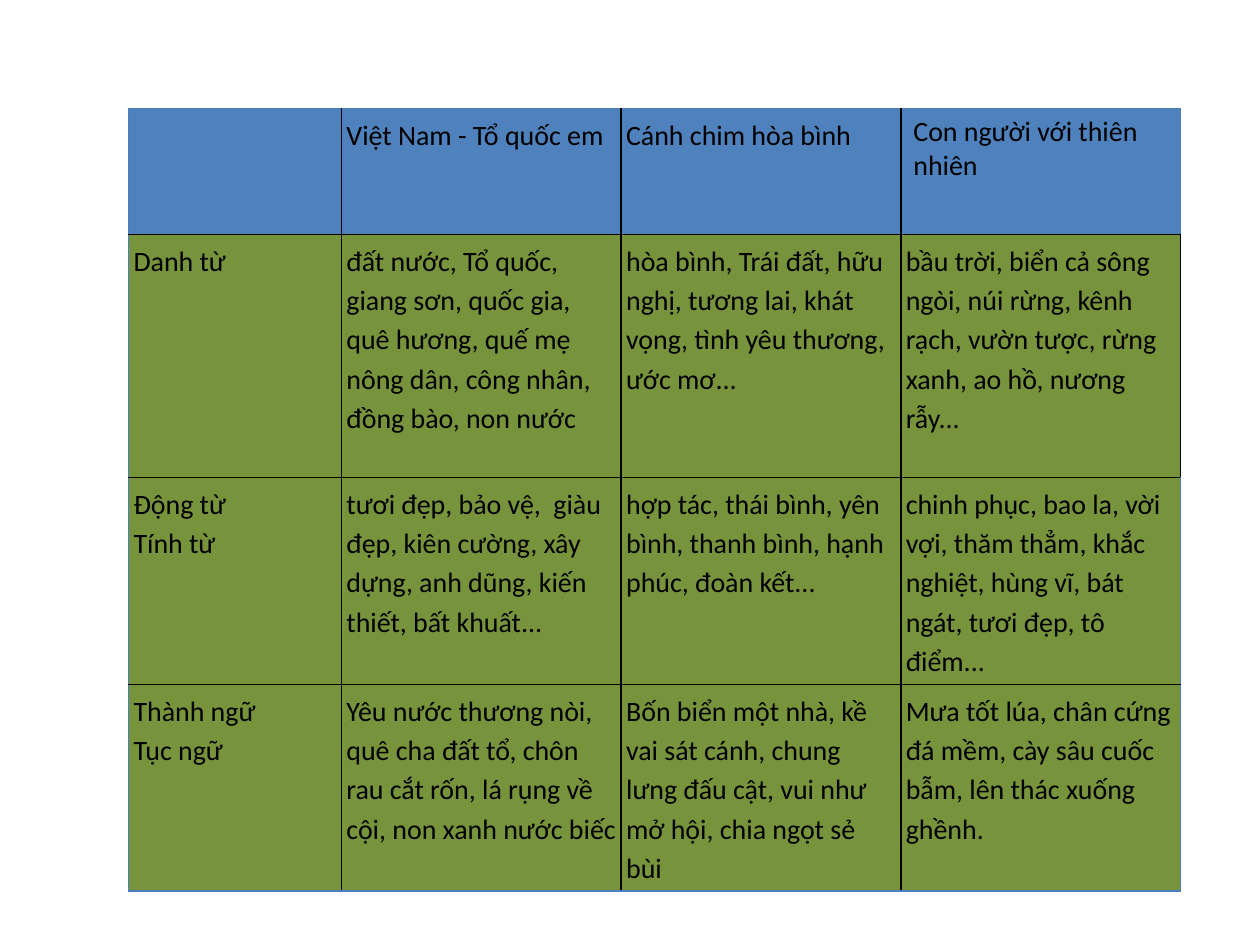
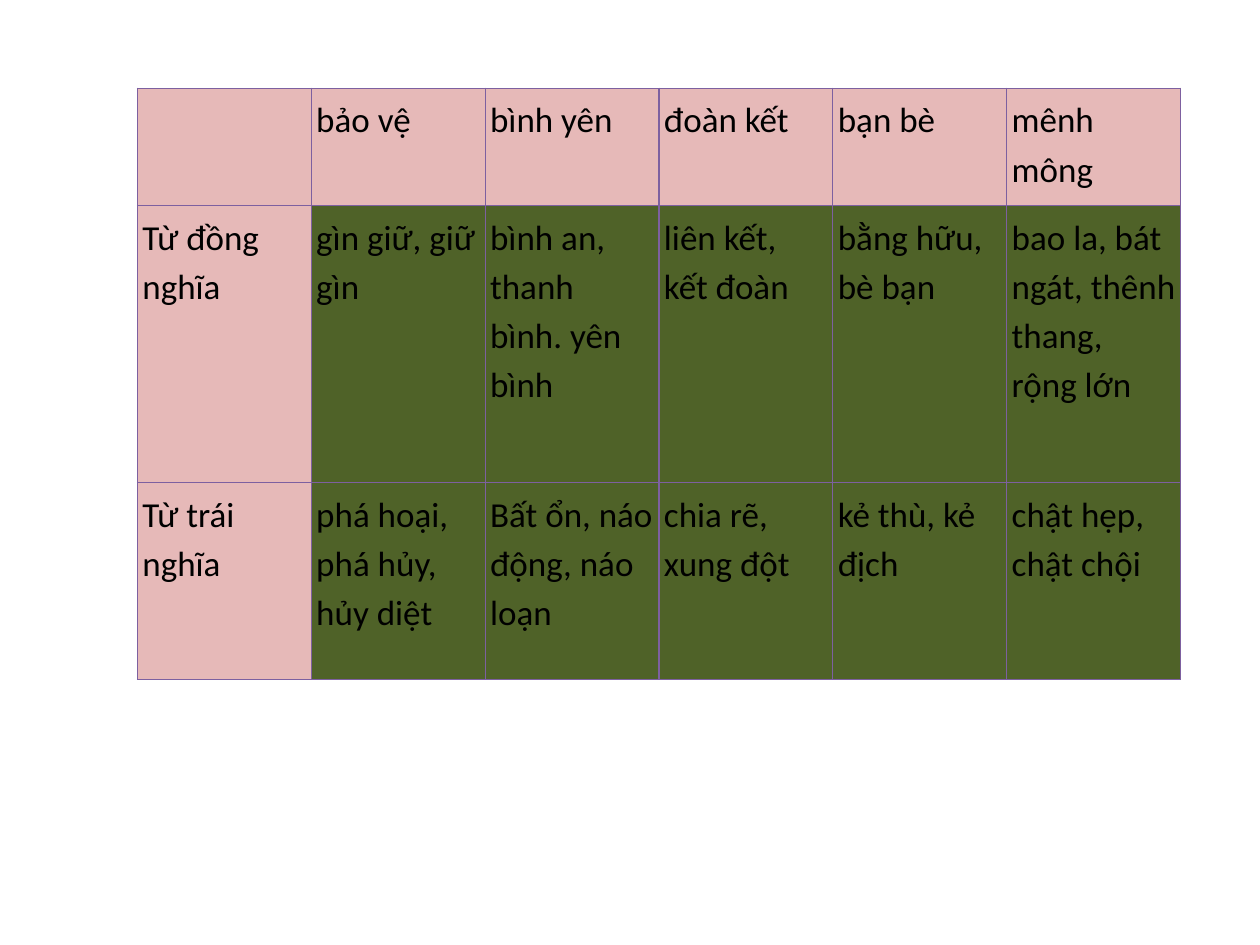
from dataclasses import dataclass, field

import lxml.etree
import pptx
import pptx.dml.color
import pptx.oxml.ns
import pptx.util

Inches = pptx.util.Inches
Pt = pptx.util.Pt

FONT = "Calibri"
BLACK = "000000"
BLUE = "4F81BD"
GREEN = "77933C"
PINK = "E6B9B8"
DARK_GREEN = "4F6228"


@dataclass(frozen=True)
class Line:
    color: str
    width: float


@dataclass(frozen=True)
class WordTable:
    left: float
    top: float
    columns: list[float]
    heights: list[float]
    rows: list[list[str]]
    size: int
    header_fill: str
    label_fill: str
    body_fill: str
    inner: Line
    outer: Line
    # Exceptions, keyed by (row, column)
    right_lines: dict = field(default_factory=dict)
    text_formats: dict = field(default_factory=dict)


PURPLE_LINE = Line("7D60A0", 0.75)

THEMES = WordTable(
    left=1.02, top=0.86, columns=[1.69] + [2.22] * 3, heights=[1, 1.93, 1.62, 1.62],
    size=16, header_fill=BLUE, label_fill=GREEN, body_fill=GREEN,
    inner=Line(BLACK, 1), outer=Line("4B7EBC", 0.75),
    right_lines={(1, 3): Line(BLACK, 1)},
    text_formats={
        (0, 3): {"margins": (0.1, 0.05), "line_spacing": 1.0},
        (3, 1): {"space_after": 12},
    },
    rows=[
        ["", "Việt Nam - Tổ quốc em", "Cánh chim hòa bình", "Con người với thiên nhiên"],
        [
            "Danh từ",
            "đất nước, Tổ quốc, giang sơn, quốc gia, quê hương, quế mẹ nông dân, "
            "công nhân, đồng bào, non nước",
            "hòa bình, Trái đất, hữu nghị, tương lai, khát vọng, tình yêu thương, ước mơ...",
            "bầu trời, biển cả sông ngòi, núi rừng, kênh rạch, vườn tược, rừng xanh, "
            "ao hồ, nương rẫy...",
        ],
        [
            "Động từ\nTính từ",
            "tươi đẹp, bảo vệ,  giàu đẹp, kiên cường, xây dựng, anh dũng, kiến thiết, "
            "bất khuất...",
            "hợp tác, thái bình, yên bình, thanh bình, hạnh phúc, đoàn kết...",
            "chinh phục, bao la, vời vợi, thăm thẳm, khắc nghiệt, hùng vĩ, bát ngát, "
            "tươi đẹp, tô điểm...",
        ],
        [
            "Thành ngữ\nTục ngữ",
            "Yêu nước thương nòi, quê cha đất tổ, chôn rau cắt rốn, lá rụng về cội, "
            "non xanh nước biếc",
            "Bốn biển một nhà, kề vai sát cánh, chung lưng đấu cật, vui như mở hội, "
            "chia ngọt sẻ bùi",
            "Mưa tốt lúa, chân cứng đá mềm, cày sâu cuốc bẫm, lên thác xuống ghềnh.",
        ],
    ],
)

SYNONYMS = WordTable(
    left=1.09, top=0.7, columns=[1.38] * 6, heights=[0.93, 2.2, 1.56],
    size=20, header_fill=PINK, label_fill=PINK, body_fill=DARK_GREEN,
    inner=PURPLE_LINE, outer=PURPLE_LINE,
    rows=[
        ["", "bảo vệ", "bình yên", "đoàn kết", "bạn bè", "mênh mông"],
        [
            "Từ đồng nghĩa", "gìn giữ, giữ gìn", "bình an, thanh bình. yên bình",
            "liên kết, kết đoàn", "bằng hữu, bè bạn",
            "bao la, bát ngát, thênh thang, rộng lớn",
        ],
        [
            "Từ trái nghĩa", "phá hoại, phá hủy, hủy diệt", "Bất ổn, náo động, náo loạn",
            "chia rẽ, xung đột", "kẻ thù, kẻ địch", "chật hẹp, chật chội",
        ],
    ],
)


def rgb(color: str) -> pptx.dml.color.RGBColor:
    return pptx.dml.color.RGBColor.from_string(color)


def write_text(cell, text: str, *, size: float, color: str = BLACK,
               margins: tuple[float, float] = (0.04, 0.04),
               line_spacing: float = 1.15, space_after: float = 0) -> None:
    """Fill a cell, one paragraph per line; margins are (side, top and bottom)."""
    side, end = margins
    cell.margin_left = cell.margin_right = Inches(side)
    cell.margin_top = cell.margin_bottom = Inches(end)
    cell.text_frame.text = text
    for paragraph in cell.text_frame.paragraphs:
        paragraph.line_spacing = line_spacing
        paragraph.space_after = Pt(space_after)
        paragraph.font.size = Pt(size)
        for run in paragraph.runs:
            run.font.name = FONT
            run.font.size = Pt(size)
            run.font.bold = False
            run.font.color.rgb = rgb(color)


def add_borders(cell, left: Line, right: Line, top: Line, bottom: Line) -> None:
    """Draw the four sides; must run before the cell gets its fill."""
    qn = pptx.oxml.ns.qn
    properties = cell._tc.get_or_add_tcPr()
    for side, line in zip("LRTB", (left, right, top, bottom)):
        border = lxml.etree.SubElement(properties, qn(f"a:ln{side}"), w=str(Pt(line.width)))
        fill = lxml.etree.SubElement(border, qn("a:solidFill"))
        lxml.etree.SubElement(fill, qn("a:srgbClr"), val=line.color)


def draw_cell(cell, words: WordTable, row: int, column: int) -> None:
    last_row, last_column = len(words.heights) - 1, len(words.columns) - 1

    def line(on_edge: bool) -> Line:
        return words.outer if on_edge else words.inner

    right = words.right_lines.get((row, column), line(column == last_column))
    add_borders(cell, line(column == 0), right, line(row == 0), line(row == last_row))
    if row == 0:
        color = words.header_fill
    else:
        color = words.label_fill if column == 0 else words.body_fill
    cell.fill.solid()
    cell.fill.fore_color.rgb = rgb(color)
    text_format = words.text_formats.get((row, column), {})
    write_text(cell, words.rows[row][column], size=words.size, **text_format)


def add_word_table(slide, words: WordTable) -> None:
    table = slide.shapes.add_table(
        len(words.heights), len(words.columns), Inches(words.left), Inches(words.top),
        Inches(sum(words.columns)), Inches(sum(words.heights))).table
    table.first_row = table.horz_banding = False
    for column, width in zip(table.columns, words.columns):
        column.width = Inches(width)
    for row, height in zip(table.rows, words.heights):
        row.height = Inches(height)
    for row in range(len(words.heights)):
        for column in range(len(words.columns)):
            draw_cell(table.cell(row, column), words, row, column)


def main() -> None:
    presentation = pptx.Presentation()
    presentation.slide_width, presentation.slide_height = Inches(10), Inches(7.5)
    blank_layout = presentation.slide_layouts[6]
    for words in (THEMES, SYNONYMS):
        add_word_table(presentation.slides.add_slide(blank_layout), words)
    presentation.save("out.pptx")


if __name__ == "__main__":
    main()
